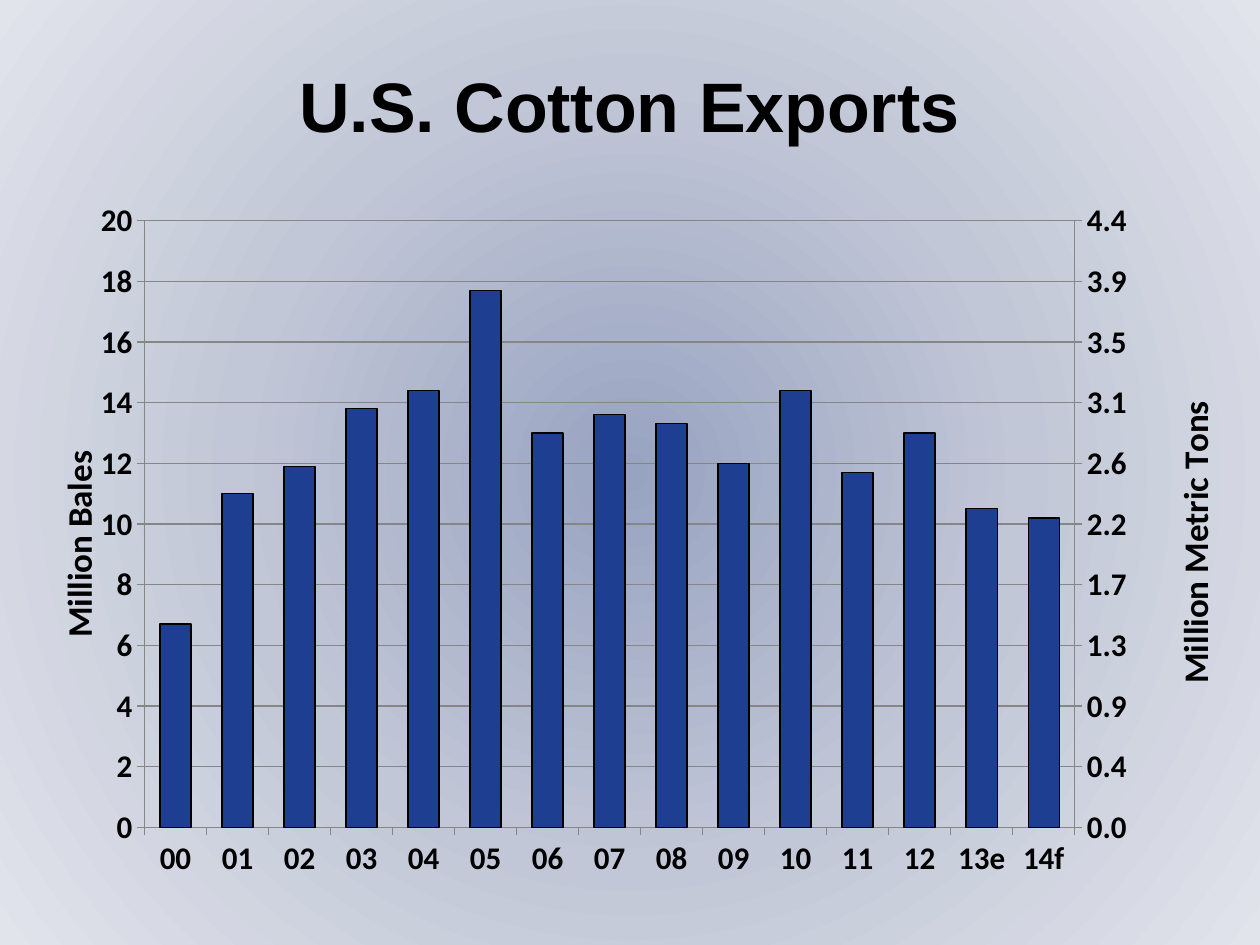
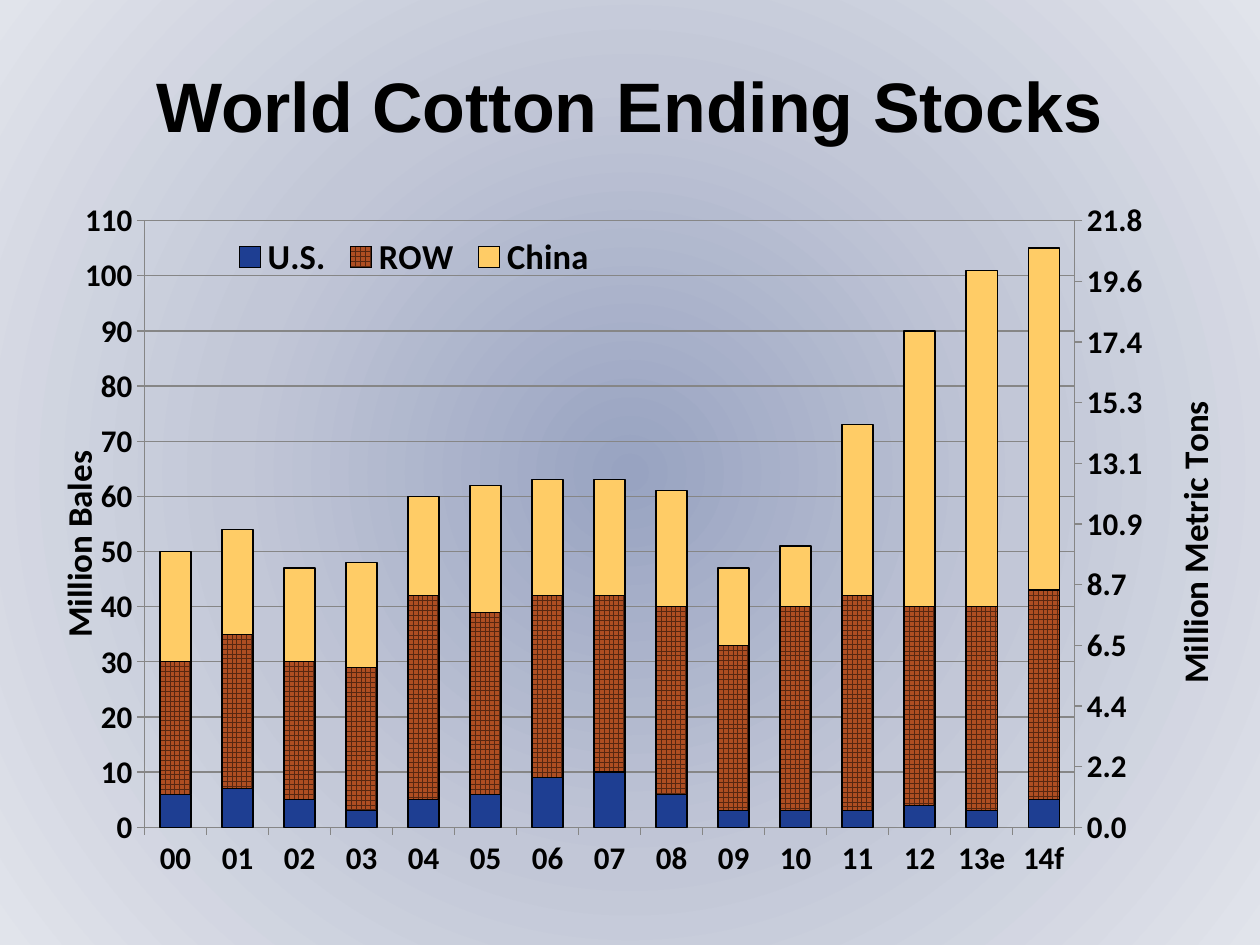
from copy import deepcopy

from lxml import etree
from pptx import Presentation
from pptx.chart.axis import ValueAxis
from pptx.chart.data import CategoryChartData
from pptx.dml.color import RGBColor
from pptx.enum.chart import XL_CHART_TYPE as ChartType
from pptx.enum.chart import XL_LEGEND_POSITION as LegendPosition
from pptx.enum.chart import XL_TICK_LABEL_POSITION as LabelPosition
from pptx.enum.chart import XL_TICK_MARK as TickMark
from pptx.enum.dml import MSO_PATTERN as Pattern
from pptx.enum.text import MSO_ANCHOR as Anchor
from pptx.enum.text import PP_ALIGN as Align
from pptx.oxml import parse_xml
from pptx.oxml.ns import qn
from pptx.util import Pt

COLORS = {
    "text": "000000", "grid": "868686",
    "blue": "1E3E92", "rust": "AE4E22", "rust_grid": "572711", "gold": "FFCC66",
    "glow": "98A3C1", "haze": "C2C7D7", "edge": "E1E4EB",
}
DRAWING_NS = "http://schemas.openxmlformats.org/drawingml/2006/main"
YEARS = [f"{year:02}" for year in range(13)] + ["13e", "14f"]
TITLE_LAYOUT = 5

EXPORTS = [
    ("Series 1", "blue", [6.7, 11, 11.9, 13.8, 14.4, 17.7, 13, 13.6, 13.3, 12,
                          14.4, 11.7, 13, 10.5, 10.2]),
]
EXPORTS_TONS = [
    ("Series 2", [1.5, 2.4, 2.6, 3, 3.1, 3.9, 2.8, 3, 2.9, 2.6, 3.1, 2.6, 2.8, 2.3, 2.2]),
]
STOCKS = [
    ("U.S.", "blue", [6, 7, 5, 3, 5, 6, 9, 10, 6, 3, 3, 3, 4, 3, 5]),
    ("ROW", "rust", [24, 28, 25, 26, 37, 33, 33, 32, 34, 30, 37, 39, 36, 37, 38]),
    ("China", "gold", [20, 19, 17, 19, 18, 23, 21, 21, 21, 14, 11, 31, 50, 61, 62]),
]
STOCKS_TONS = [
    ("Series 4", [1.3, 1.6, 1.2, 0.8, 1.2, 1.3, 2.1, 2.2, 1.4, 0.6, 0.6, 0.7, 0.8, 0.6, 1.1]),
    ("Series 5", [5.2, 6.2, 5.4, 5.6, 8, 7.2, 7.2, 6.9, 7.5, 6.5, 8.1, 8.5, 7.8, 8, 8.3]),
    ("Series 6", [4.3, 4.1, 3.8, 4.1, 4, 4.9, 4.5, 4.5, 4.7, 3.1, 2.3, 6.8, 11, 13.4, 13.6]),
]


def rgb(name):
    return RGBColor.from_string(COLORS[name])


def set_font(font, size, name="Calibri"):
    font.name, font.size, font.bold = name, Pt(size), True
    font.color.rgb = rgb("text")


def set_value(parent, tag, value):
    parent.find(qn(tag)).set("val", value)


def place(parent, index, inner=False, **settings):
    """Give a chart part a manual layout, as fractions of the chart."""
    for old in parent.findall(qn("c:layout")):
        parent.remove(old)
    layout = etree.Element(qn("c:layout"))
    manual = etree.SubElement(layout, qn("c:manualLayout"))
    if inner:
        etree.SubElement(manual, qn("c:layoutTarget"), val="inner")
    for mode in ("xMode", "yMode"):
        etree.SubElement(manual, qn(f"c:{mode}"), val="edge")
    for key, value in settings.items():
        etree.SubElement(manual, qn(f"c:{key}"), val=str(value))
    parent.insert(index, layout)


class Deck:
    def __init__(self):
        self.presentation = Presentation()
        self.presentation.slide_width, self.presentation.slide_height = Pt(720), Pt(540)
        self.slide = None
        self.paint_background()

    def paint_background(self):
        master = self.presentation.slide_master
        master.background.fill.solid()
        plain = master.element.find(f".//{qn('p:bgPr')}/{qn('a:solidFill')}")
        stops = "".join(
            f'<a:gs pos="{pos}"><a:srgbClr val="{COLORS[name]}"/></a:gs>'
            for pos, name in ((0, "glow"), (50000, "haze"), (100000, "edge")))
        glow = parse_xml(
            f'<a:gradFill xmlns:a="{DRAWING_NS}" rotWithShape="1"><a:gsLst>{stops}</a:gsLst>'
            '<a:path path="circle"><a:fillToRect l="50000" t="50000" r="50000" b="50000"/>'
            '</a:path></a:gradFill>')
        plain.getparent().replace(plain, glow)

    def add_slide(self, title):
        layout = self.presentation.slide_layouts[TITLE_LAYOUT]
        self.slide = self.presentation.slides.add_slide(layout)
        heading = self.slide.shapes.title
        heading.left, heading.top, heading.width, heading.height = Pt(18), Pt(24), Pt(683.5), Pt(72)
        heading.text_frame.text = title
        heading.text_frame.vertical_anchor = Anchor.MIDDLE
        paragraph = heading.text_frame.paragraphs[0]
        paragraph.alignment = Align.CENTER
        set_font(paragraph.font, 40, "Arial")

    def add_chart(self, chart_type, bales, tons, bales_scale, tons_max):
        """Draw bales on the left axis; invisible tons columns carry the right axis."""
        data = CategoryChartData()
        data.categories = YEARS
        for name, *_, values in bales + tons:
            data.add_series(name, values)
        chart = self.slide.shapes.add_chart(
            chart_type, Pt(18), Pt(84.25), Pt(683.5), Pt(431.25), data).chart
        chart.has_title = chart.has_legend = False
        set_font(chart.font, 18)

        columns = chart.plots[0]
        columns.gap_width = 100
        columns.vary_by_categories = False
        for index, series in enumerate(columns.series):
            self.style_series(series, bales[index][1] if index < len(bales) else None)

        years = chart.category_axis
        years.tick_label_position = LabelPosition.LOW
        years.major_tick_mark = TickMark.OUTSIDE
        self.style_line(years.format.line)
        bales_axis = chart.value_axis
        tons_axis = self.split_right_axis(chart, len(bales))
        self.style_axis(bales_axis, "Million Bales", "#,##0", bales_scale, (0.014, 0.39))
        self.style_axis(tons_axis, "Million Metric Tons", "#,##0.0",
                        (tons_max, tons_max / 10), (0.962, 0.322))
        bales_axis.has_major_gridlines = True
        self.style_line(bales_axis.major_gridlines.format.line)
        place(columns._element.getparent(), 0, inner=True, x=0.096, y=0.097, w=0.79, h=0.804)
        return chart

    def split_right_axis(self, chart, left_count):
        """Move the series after left_count to a second pair of axes."""
        left = chart.plots[0]._element
        right = deepcopy(left)
        for group, unwanted in ((left, slice(left_count, None)), (right, slice(left_count))):
            for series in group.findall(qn("c:ser"))[unwanted]:
                group.remove(series)
        left.addnext(right)

        plot_area = left.getparent()
        year_axis = deepcopy(plot_area.find(qn("c:catAx")))
        tons_axis = deepcopy(plot_area.find(qn("c:valAx")))
        year_id, tons_id = "5001", "5002"
        for axis_id, value in zip(right.findall(qn("c:axId")), (year_id, tons_id)):
            axis_id.set("val", value)
        for axis, own, other in ((year_axis, year_id, tons_id), (tons_axis, tons_id, year_id)):
            set_value(axis, "c:axId", own)
            set_value(axis, "c:crossAx", other)
        set_value(tons_axis, "c:axPos", "r")
        set_value(tons_axis, "c:crosses", "max")
        set_value(year_axis, "c:delete", "1")
        plot_area.find(qn("c:valAx")).addnext(tons_axis)
        tons_axis.addnext(year_axis)
        axis = ValueAxis(tons_axis)
        axis.has_major_gridlines = False
        return axis

    def style_line(self, line, color="grid"):
        line.color.rgb = rgb(color)
        line.width = Pt(0.75)

    def style_series(self, series, color):
        fill = series.format.fill
        if color is None:
            fill.background()
            series.format.line.fill.background()
            return
        if color == "rust":
            fill.patterned()
            fill.pattern = Pattern.LARGE_GRID
            fill.fore_color.rgb, fill.back_color.rgb = rgb("rust_grid"), rgb("rust")
        else:
            fill.solid()
            fill.fore_color.rgb = rgb(color)
        self.style_line(series.format.line, "text")

    def style_axis(self, axis, title, number_format, scale, title_place):
        axis.minimum_scale = 0
        axis.maximum_scale, axis.major_unit = scale
        axis.major_tick_mark = TickMark.OUTSIDE
        axis.tick_labels.number_format = number_format
        axis.tick_labels.number_format_is_linked = False
        self.style_line(axis.format.line)
        frame = axis.axis_title.text_frame
        frame.text = title
        set_font(frame.paragraphs[0].font, 20)
        body = frame._txBody.find(qn("a:bodyPr"))
        body.set("rot", "-5400000")
        body.set("vert", "horz")
        x, y = title_place
        place(axis.axis_title._element, 1, x=x, y=y)

    def add_legend(self, chart, hidden):
        chart.has_legend = True
        legend = chart.legend
        legend.position = LegendPosition.TOP
        legend.include_in_layout = False
        set_font(legend.font, 20)
        place(legend._element, 1, x=0.165, y=0.11, w=0.32, h=0.07)
        for offset, index in enumerate(hidden):
            entry = etree.Element(qn("c:legendEntry"))
            etree.SubElement(entry, qn("c:idx"), val=str(index))
            etree.SubElement(entry, qn("c:delete"), val="1")
            legend._element.insert(1 + offset, entry)


def main():
    deck = Deck()
    deck.add_slide("U.S. Cotton Exports")
    deck.add_chart(ChartType.COLUMN_CLUSTERED, EXPORTS, EXPORTS_TONS, (20, 2), 4.357298)

    deck.add_slide("World Cotton Ending Stocks")
    stocks = deck.add_chart(ChartType.COLUMN_STACKED, STOCKS, STOCKS_TONS, (110, 10), 21.786492)
    deck.add_legend(stocks, range(len(STOCKS), len(STOCKS + STOCKS_TONS)))
    deck.presentation.save("out.pptx")


if __name__ == "__main__":
    main()
